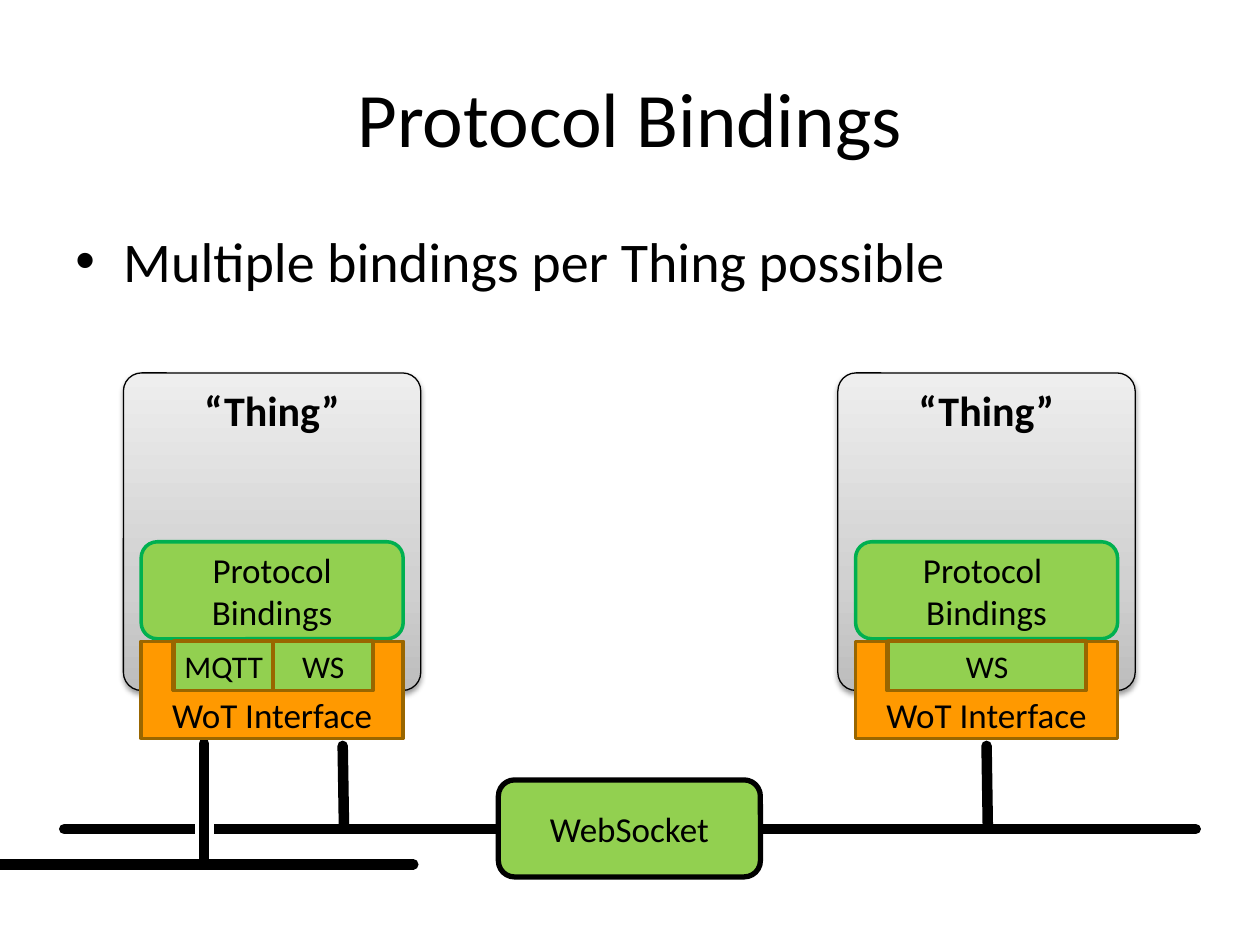
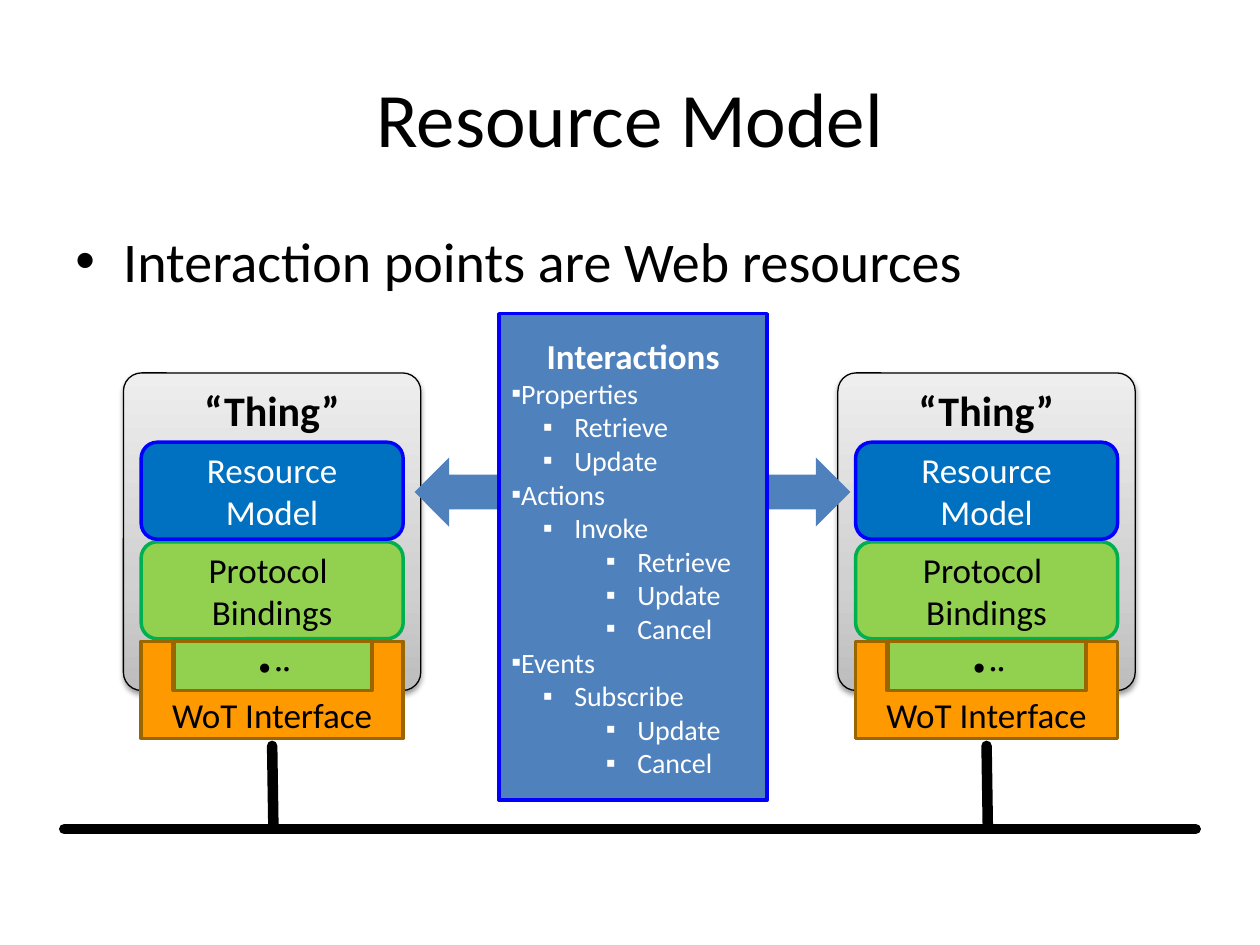
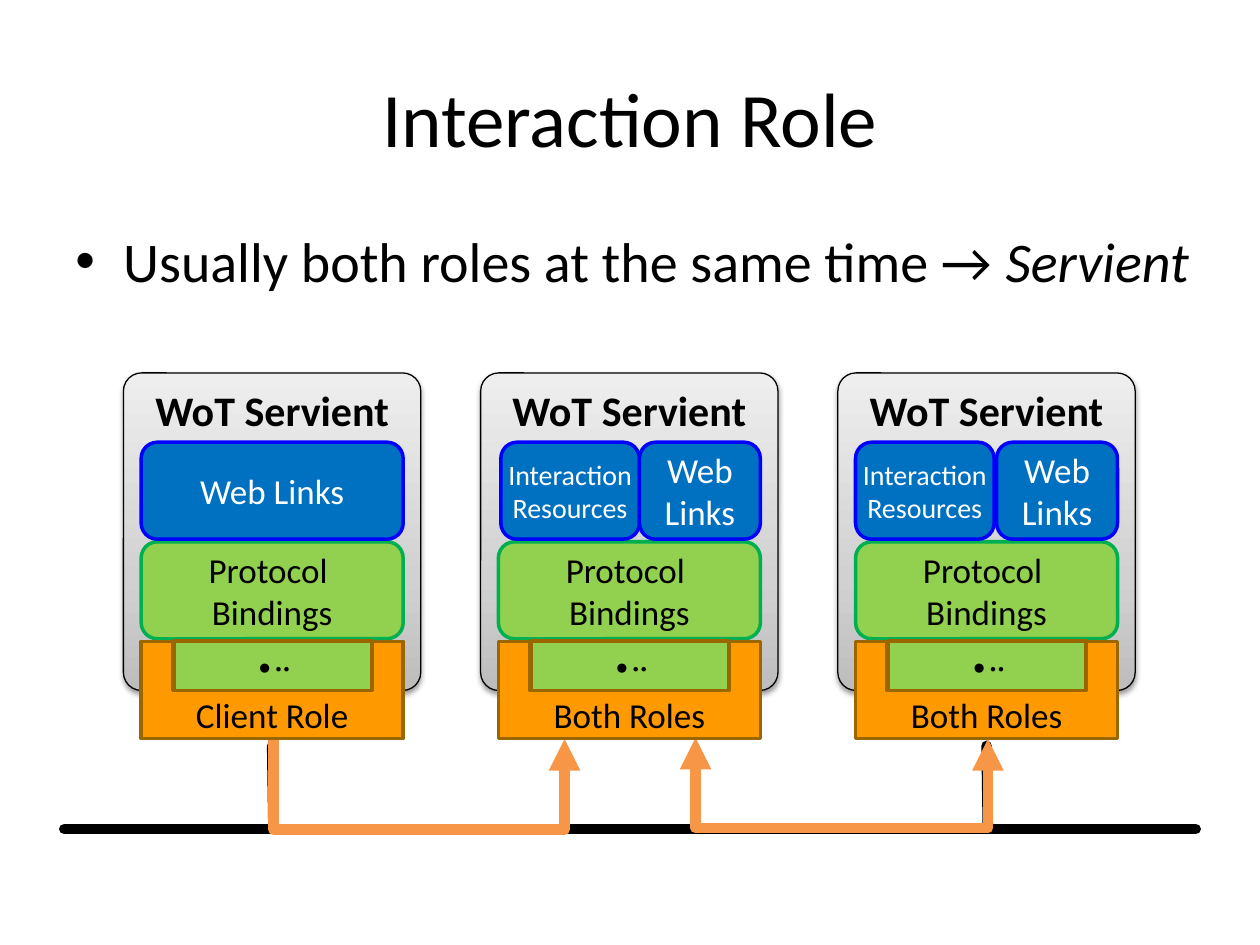
import copy

import pptx
import pptx.dml.color
import pptx.enum.dml
import pptx.enum.shapes
import pptx.enum.text
import pptx.oxml
import pptx.oxml.ns
import pptx.util
from pptx.util import Inches

HUES = {
    "black": "000000", "white": "FFFFFF", "green": "92D050", "moss": "00B050",
    "amber": "FF9900", "brown": "996600", "blue": "0070C0", "edge": "0000FF",
    "steel": "4F81BD", "orange": "F79646",
    "dark": "BDBDBD", "mid": "D1D1D1", "light": "EEEEEE",
}
FONT = "Calibri"
LEFT, PITCH, SIDE = 0.98, 2.835, 0.14
WIDE, TALL = 2.08, 0.77
MODEL, BIND, PORT, BASE, BUS = 3.51, 4.3, 5.09, 5.86, 6.58
SLOT, SPAN, DEEP = 0.4, 1.57, 0.39
DOTS = "∙··"
KIND = pptx.enum.shapes.MSO_SHAPE
WIRE = pptx.enum.shapes.MSO_CONNECTOR
ALIGN = pptx.enum.text.PP_ALIGN
ANCHOR = pptx.enum.text.MSO_ANCHOR
qn = pptx.oxml.ns.qn


def hue(name):
    return pptx.dml.color.RGBColor.from_string(HUES[name])


def column(index):
    return LEFT + PITCH * index


def node(parent, tag, **attrs):
    item = parent.makeelement(qn(tag), {k: str(v) for k, v in attrs.items()})
    parent.append(item)
    return item


class Deck:
    def __init__(self):
        self.show = pptx.Presentation()
        self.show.slide_width = Inches(10)
        self.show.slide_height = Inches(7.5)
        self.slide = None

    def page(self, title, *runs, width=9):
        self.slide = self.show.slides.add_slide(self.show.slide_layouts[6])
        frame = self.frame(self.area(0.5, 0.3, 9, 1.25), ANCHOR.MIDDLE)
        self.say(frame.paragraphs[0], title, 44)
        frame = self.frame(self.area(0.5, 1.75, width, 4.95), ANCHOR.TOP)
        para = frame.paragraphs[0]
        for text, slant in runs:
            self.say(para, text, 32, align=ALIGN.LEFT, slant=slant)
        self.bullet(para, "•", 0.38, -0.38)
        para.space_before = pptx.util.Pt(6.4)

    def area(self, x, y, w, h):
        return self.slide.shapes.add_textbox(Inches(x), Inches(y), Inches(w), Inches(h))

    def frame(self, shape, anchor, pad=(0.1, 0.05, 0.1, 0.05), wrap=True):
        frame = shape.text_frame
        frame.word_wrap = wrap
        frame.vertical_anchor = anchor
        (frame.margin_left, frame.margin_top,
         frame.margin_right, frame.margin_bottom) = map(Inches, pad)
        return frame

    def say(self, para, text, size, ink="black", align=ALIGN.CENTER, bold=False, slant=False):
        para.alignment = align
        for index, part in enumerate(text.split("\n")):
            if index:
                para.add_line_break()
            run = para.add_run()
            run.text = part
            font = run.font
            font.name, font.size = FONT, pptx.util.Pt(size)
            font.bold, font.italic = bold, slant
            font.color.rgb = hue(ink)

    def bullet(self, para, mark, margin, indent):
        props = para._p.get_or_add_pPr()
        props.set("marL", str(Inches(margin)))
        props.set("indent", str(Inches(indent)))
        node(props, "a:buFont", typeface="Arial")
        node(props, "a:buChar", char=mark)

    def style(self, shape, fill, edge, weight):
        shape.shadow.inherit = False
        shape.fill.solid()
        shape.fill.fore_color.rgb = hue(fill)
        if edge:
            shape.line.color.rgb = hue(edge)
            shape.line.width = pptx.util.Pt(weight)
        else:
            shape.line.fill.background()

    def shape(self, kind, x, y, w, h, fill, edge=None, weight=2):
        shape = self.slide.shapes.add_shape(kind, Inches(x), Inches(y), Inches(w), Inches(h))
        self.style(shape, fill, edge, weight)
        return shape

    def box(self, x, y, text, fill="green", edge="moss", ink="black", w=WIDE, h=TALL,
            size=20, weight=2, kind=KIND.ROUNDED_RECTANGLE, inset=0.1):
        shape = self.shape(kind, x, y, w, h, fill, edge, weight)
        frame = self.frame(shape, ANCHOR.MIDDLE, (inset, 0.05, inset, 0.05))
        self.say(frame.paragraphs[0], text, size, ink)

    def model(self, x, text, **extra):
        self.box(x, MODEL, text, "blue", "edge", "white", **extra)

    def pair(self, x, start, gap):
        self.model(x + start, "Interaction\nResources", w=1.1, size=16, inset=0)
        self.model(x + start + 1.1 + gap, "Web\nLinks", w=0.96)

    def slot(self, x, text, w=SPAN, inset=0.1):
        self.box(x, PORT, text, "green", "brown", w=w, h=DEEP, size=18,
                 weight=2.25, kind=KIND.RECTANGLE, inset=inset)

    def card(self, x, text):
        card = self.shape(KIND.ROUNDED_RECTANGLE, x, 2.96, 2.36, 2.52, "light", "black", 0.75)
        card.adjustments[0] = 0.061
        card.fill.gradient()
        card.fill.gradient_angle = 90
        stops = card.element.find(".//" + qn("a:gsLst"))
        stops.insert(1, copy.deepcopy(stops[0]))
        tones = (("dark", 0), ("mid", 0.35), ("light", 1))
        for stop, (tone, place) in zip(card.fill.gradient_stops, tones):
            stop.color.rgb, stop.position = hue(tone), place
        effect = card.element.spPr.find(qn("a:effectLst"))
        shade = node(effect, "a:outerShdw", blurRad=40000, dist=20000, dir=5400000, rotWithShape=0)
        node(node(shade, "a:srgbClr", val=HUES["black"]), "a:alpha", val=38000)
        frame = self.frame(card, ANCHOR.TOP, wrap=False)
        self.say(frame.paragraphs[0], text, 24, bold=True)

    def port(self, x, text):
        right, low = x + WIDE, PORT + DEEP
        points = [(x + 0.25, PORT), (x + 0.25, low), (x + 1.82, low), (x + 1.82, PORT),
                  (right, PORT), (right, BASE), (x, BASE)]
        pen = self.slide.shapes.build_freeform(Inches(x), Inches(PORT), 1)
        pen.add_line_segments([(Inches(a), Inches(b)) for a, b in points], close=True)
        shape = pen.convert_to_shape()
        self.style(shape, "amber", "brown", 2)
        frame = self.frame(shape, ANCHOR.BOTTOM, (0.1, 0, 0.1, 0.02))
        self.say(frame.paragraphs[0], text, 20)

    def stack(self, x, role, label="Protocol \nBindings"):
        self.box(x, BIND, label)
        self.port(x, role)

    def wire(self, x1, y1, x2, y2, ink="black", weight=6, kind=WIRE.STRAIGHT, cap="rnd"):
        wire = self.slide.shapes.add_connector(kind, Inches(x1), Inches(y1), Inches(x2), Inches(y2))
        wire.line.color.rgb = hue(ink)
        wire.line.width = pptx.util.Pt(weight)
        wire.element.spPr.find(qn("a:ln")).set("cap", cap)
        node(wire.element.spPr, "a:effectLst")
        return wire

    def drop(self, x):
        self.wire(x, 6.56, x - 0.01, 5.92)

    def route(self, x1, x2, y, depth, ends):
        thin, span = 0.01, x2 - x1
        left, top = (x1 + x2 - thin) / 2, y - span / 2
        wire = self.wire(left, top, left + thin, top + span, "orange", kind=WIRE.ELBOW, cap="flat")
        frame = wire.element.spPr.find(qn("a:xfrm"))
        frame.set("rot", "16200000")
        frame.set("flipH", "1")
        guide = wire.element.find(".//" + qn("a:avLst"))
        node(guide, "a:gd", name="adj1", fmla=f"val {round(depth / thin * 100000)}")
        line = wire.element.spPr.find(qn("a:ln"))
        node(line, "a:round")
        for end in ends:
            node(line, end, type="triangle")

    def panel(self, x, y, w, h, title, items):
        panel = self.shape(KIND.RECTANGLE, x, y, w, h, "steel", "edge")
        frame = self.frame(panel, ANCHOR.MIDDLE)
        self.say(frame.paragraphs[0], title, 20, "white", bold=True)
        for level, text in items:
            para = frame.add_paragraph()
            para.level = level
            self.say(para, text, 16, "white", ALIGN.LEFT)
            self.bullet(para, "▪", level * 0.5, -0.25 if level else 0)


def bindings(deck):
    deck.page("Protocol Bindings", ("Multiple bindings per Thing possible", False))
    for index in (0, 2):
        deck.card(column(index), "“Thing”")
    deck.wire(0.51, BUS, 9.49, BUS)
    deck.drop(2.73)
    deck.drop(7.84)
    deck.wire(-0.2, 6.86, 3.28, 6.86)
    for x in (1.68, 1.57):
        deck.wire(x, 6.35, x, 6.74, "white", 3, cap="flat")
    deck.wire(1.62, 6.85, 1.62, 5.9)
    deck.stack(column(0) + SIDE, "WoT Interface", "Protocol\nBindings")
    deck.stack(column(2) + SIDE, "WoT Interface")
    deck.box(column(1) + SIDE, 6.19, "WebSocket", edge="black", weight=3)
    deck.slot(column(0) + SLOT + 0.79, "WS", w=0.79)
    deck.slot(column(2) + SLOT, "WS")
    deck.slot(column(0) + SLOT, "MQTT", w=0.79, inset=0)


def resources(deck):
    deck.page("Resource Model", ("Interaction points are Web resources", False))
    for index in (0, 2):
        deck.card(column(index), "“Thing”")
    deck.wire(0.51, BUS, 9.49, BUS)
    for index in (0, 2):
        x = column(index)
        deck.drop(x + 1.19)
        deck.stack(x + SIDE, "WoT Interface")
        deck.model(x + SIDE, "Resource\nModel")
        deck.slot(x + SLOT, DOTS)
    deck.shape(KIND.LEFT_RIGHT_ARROW, 3.29, 3.63, 3.46, 0.55, "steel")
    deck.panel(3.96, 2.49, 2.13, 3.86, "Interactions", [
        (0, "Properties"), (1, "Retrieve"), (1, "Update"),
        (0, "Actions"), (1, "Invoke"), (2, "Retrieve"), (2, "Update"), (2, "Cancel"),
        (0, "Events"), (1, "Subscribe"), (2, "Update"), (2, "Cancel"),
    ])


def roles(deck):
    deck.page("Interaction Role", ("Usually both roles at the same time → ", False),
              ("Servient", True), width=9.3)
    for index in range(3):
        deck.card(column(index), "WoT Servient")
    deck.wire(0.51, BUS, 9.49, BUS)
    deck.drop(2.17)
    deck.drop(7.84)
    deck.route(2.17, 4.48, BASE, 0.74, ["a:tailEnd"])
    deck.route(5.52, 7.84, BASE, 0.73, ["a:headEnd", "a:tailEnd"])
    for index, role in enumerate(("Client Role", "Both Roles", "Both Roles")):
        deck.stack(column(index) + SIDE, role)
        deck.slot(column(index) + SLOT, DOTS)
    deck.model(column(0) + SIDE, "Web Links")
    deck.pair(column(1), 0.16, 0)
    deck.pair(column(2), SIDE, 0.02)


def main():
    deck = Deck()
    for build in (bindings, resources, roles):
        build(deck)
    deck.show.save("out.pptx")


if __name__ == "__main__":
    main()
